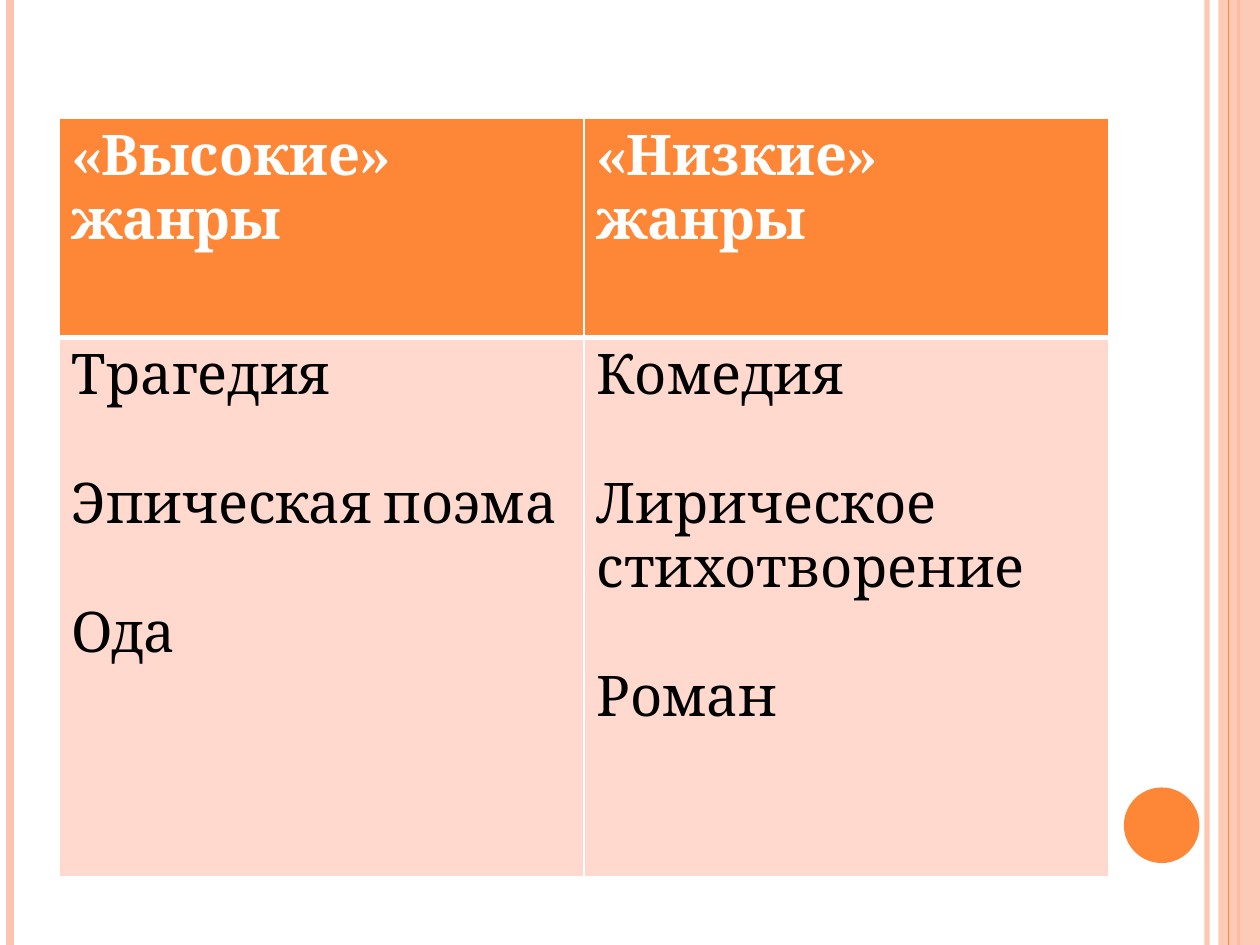
from dataclasses import dataclass

from pptx import Presentation
from pptx.dml.color import RGBColor
from pptx.enum.shapes import MSO_CONNECTOR, MSO_SHAPE
from pptx.oxml.ns import qn
from pptx.util import Inches, Pt
from lxml.etree import SubElement


@dataclass(frozen=True)
class Theme:
    orange: RGBColor = RGBColor(0xFE, 0x86, 0x37)
    peach: RGBColor = RGBColor(0xFE, 0xC3, 0xAE)
    pale: RGBColor = RGBColor(0xFF, 0xD9, 0xCE)
    white: RGBColor = RGBColor(0xFF, 0xFF, 0xFF)
    black: RGBColor = RGBColor(0, 0, 0)
    font: str = "Cambria"
    text_size: Pt = Pt(32)
    genre_gap: Pt = Pt(36.8)


theme = Theme()


def set_opacity(element, percent):
    """Make the first solid colour inside the element partly transparent."""
    color = next(element.iter(qn("a:srgbClr")))
    SubElement(color, qn("a:alpha"), val=str(percent * 1000))


def add_border(cell, side, width):
    properties = cell._tc.get_or_add_tcPr()
    line = SubElement(properties, qn(f"a:ln{side}"), w=str(Pt(width)))
    fill = SubElement(line, qn("a:solidFill"))
    SubElement(fill, qn("a:srgbClr"), val=str(theme.white))


deck = Presentation()
deck.slide_width, deck.slide_height = Inches(10), Inches(7.5)
slide = deck.slides.add_slide(deck.slide_layouts[6])
shapes = slide.shapes

# Side decoration, from back to front
stripes = [
    ("line", 9.58, 3, theme.peach, 93),
    ("line", 0.08, 4.5, theme.peach, 100),
    ("line", 9.83, 1.5, theme.orange, 100),
    ("band", 9.67, 0.33, theme.peach, 87),
    ("line", 9.75, 0.75, theme.orange, 100),
]
for kind, left, width, color, opacity in stripes:
    if kind == "line":
        stripe = shapes.add_connector(
            MSO_CONNECTOR.STRAIGHT, Inches(left), 0, Inches(left), deck.slide_height
        )
        stripe.line.width = Pt(width)
        stripe.line.color.rgb = color
        SubElement(stripe._element.spPr, qn("a:effectLst"))
    else:
        stripe = shapes.add_shape(
            MSO_SHAPE.RECTANGLE, Inches(left), 0, Inches(width), deck.slide_height
        )
        stripe.shadow.inherit = False
        stripe.fill.solid()
        stripe.fill.fore_color.rgb = color
        stripe.line.fill.background()
    if opacity < 100:
        set_opacity(stripe._element.spPr, opacity)

circle = shapes.add_shape(
    MSO_SHAPE.OVAL, Inches(8.92), Inches(6.25), Inches(0.6), Inches(0.6)
)
circle.shadow.inherit = False
circle.fill.solid()
circle.fill.fore_color.rgb = theme.orange
circle.line.fill.background()

# Genre table
genres = [
    [["«Высокие» жанры"], ["«Низкие» жанры"]],
    [
        ["Трагедия", "Эпическая поэма", "Ода"],
        ["Комедия", "Лирическое стихотворение", "Роман"],
    ],
]
row_styles = [
    {"fill": theme.orange, "color": theme.white, "bold": True, "bottom": 3},
    {"fill": theme.pale, "color": theme.black, "bold": False, "bottom": 1},
]
table = shapes.add_table(
    2, 2, Inches(0.47), Inches(0.94), Inches(8.33), Inches(6.02)
).table
for row, height in zip(table.rows, (1.74, 4.28)):
    row.height = Inches(height)

for row_index, (row, style) in enumerate(zip(genres, row_styles)):
    top = row_styles[row_index - 1]["bottom"] if row_index else 1
    borders = {"L": 1, "R": 1, "T": top, "B": style["bottom"]}
    for column_index, names in enumerate(row):
        cell = table.cell(row_index, column_index)
        for side, width in borders.items():
            add_border(cell, side, width)
        cell.fill.solid()
        cell.fill.fore_color.rgb = style["fill"]
        for index, name in enumerate(names):
            frame = cell.text_frame
            para = frame.add_paragraph() if index else frame.paragraphs[0]
            if index:
                para.space_before = theme.genre_gap
            span = para.add_run()
            span.text = name
            font_format = {
                "name": theme.font, "size": theme.text_size, "bold": style["bold"]
            }
            for attribute, value in font_format.items():
                setattr(span.font, attribute, value)
            span.font.color.rgb = style["color"]

deck.save("out.pptx")
